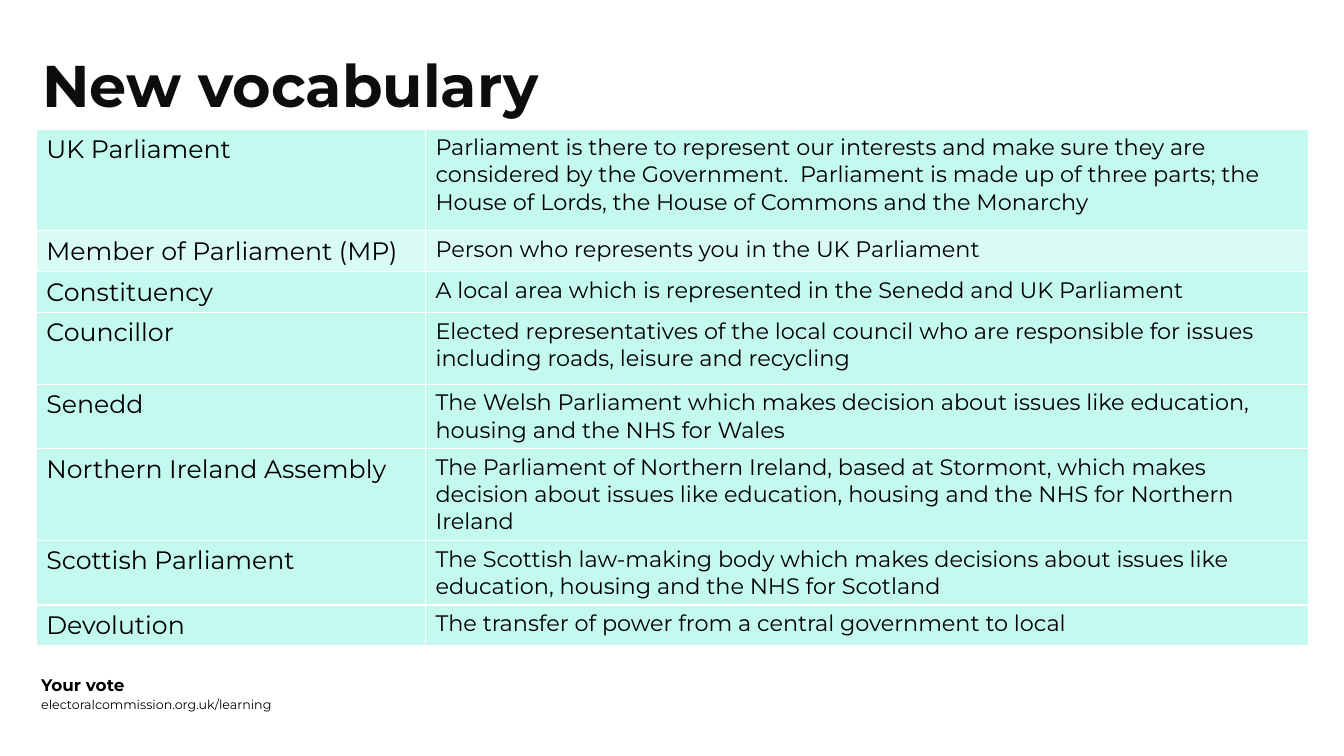
from lxml import etree
from pptx import Presentation
from pptx.dml.color import RGBColor
from pptx.enum.text import MSO_ANCHOR, PP_ALIGN
from pptx.oxml.ns import qn
from pptx.util import Inches, Pt

TOP, MIDDLE, LEFT = MSO_ANCHOR.TOP, MSO_ANCHOR.MIDDLE, PP_ALIGN.LEFT

FONT = "Montserrat"
COLOURS = {"title": "0D0D0D", "text": "000000", "cell": "00E7BD", "border": "FFFFFF"}
TITLE = "New vocabulary"
STRONG_TINT, LIGHT_TINT = 23, 15  # per cent opacity

# term, meaning, row height in inches, tint
VOCABULARY = [
    ("UK Parliament",
     "Parliament is there to represent our interests and make sure they are "
     "considered by the Government.  Parliament is made up of three parts; the "
     "House of Lords, the House of Commons and the Monarchy", 1.01, STRONG_TINT),
    ("Member of Parliament (MP)",
     "Person who represents you in the UK Parliament", 0.4, LIGHT_TINT),
    ("Constituency",
     "A local area which is represented in the Senedd and UK Parliament", 0.4, STRONG_TINT),
    ("Councillor",
     "Elected representatives of the local council who are responsible for issues "
     "including roads, leisure and recycling", 0.71, STRONG_TINT),
    ("Senedd",
     "The Welsh Parliament which makes decision about issues like education, "
     "housing and the NHS for Wales", 0.64, STRONG_TINT),
    ("Northern Ireland Assembly",
     "The Parliament of Northern Ireland, based at Stormont, which makes decision "
     "about issues like education, housing and the NHS for Northern Ireland",
     0.91, STRONG_TINT),
    ("Scottish Parliament",
     "The Scottish law-making body which makes decisions about issues like "
     "education, housing and the NHS for Scotland", 0.64, STRONG_TINT),
    ("Devolution",
     "The transfer of power from a central government to local", 0.4, STRONG_TINT),
]
COLUMNS = [(3.86, 18), (8.76, 16)]  # width in inches, text size
TABLE_LEFT, TABLE_TOP = 0.36, 1.28

# text, top in inches, size, bold
FOOTER = [
    ("Your vote", 6.59, 12, True),
    ("electoralcommission.org.uk/learning", 6.79, 9, False),
]


def style(paragraph, size, colour, bold=False):
    paragraph.alignment = LEFT
    font = paragraph.font
    font.name, font.size, font.bold = FONT, Pt(size), bold
    font.color.rgb = RGBColor.from_string(COLOURS[colour])


def paint_cell(cell, opacity):
    """Give the cell a translucent fill and thin borders on all sides."""
    properties = cell._tc.get_or_add_tcPr()
    for side in ("a:lnL", "a:lnR", "a:lnT", "a:lnB"):
        line = etree.SubElement(properties, qn(side), w=str(Pt(1)))
        solid = etree.SubElement(line, qn("a:solidFill"))
        etree.SubElement(solid, qn("a:srgbClr"), val=COLOURS["border"])
    cell.fill.solid()
    cell.fill.fore_color.rgb = RGBColor.from_string(COLOURS["cell"])
    colour = properties.find(qn("a:solidFill")).find(qn("a:srgbClr"))
    etree.SubElement(colour, qn("a:alpha"), val=str(opacity * 1000))


def add_title(slide):
    title = slide.shapes.title
    title.left, title.top = Inches(0.32), Inches(0.51)
    title.width, title.height = Inches(9.95), Inches(0.75)
    title.text_frame.text = TITLE
    title.text_frame.vertical_anchor = TOP
    paragraph = title.text_frame.paragraphs[0]
    style(paragraph, 42, "title", bold=True)
    paragraph.line_spacing = 0.9


def add_vocabulary(slide):
    width = sum(column[0] for column in COLUMNS)
    height = sum(entry[2] for entry in VOCABULARY)
    table = slide.shapes.add_table(
        len(VOCABULARY), len(COLUMNS), Inches(TABLE_LEFT), Inches(TABLE_TOP),
        Inches(width), Inches(height)).table
    table.first_row = table.horz_banding = False
    for column, (column_width, _) in zip(table.columns, COLUMNS):
        column.width = Inches(column_width)
    for row, (term, meaning, row_height, tint) in zip(table.rows, VOCABULARY):
        row.height = Inches(row_height)
        for cell, text, (_, size) in zip(row.cells, (term, meaning), COLUMNS):
            cell.text = text
            style(cell.text_frame.paragraphs[0], size, "text")
            paint_cell(cell, tint)


def add_footer(slide):
    for text, top, size, bold in FOOTER:
        box = slide.shapes.add_textbox(Inches(0.31), Inches(top), Inches(7.65), Inches(0.4))
        frame = box.text_frame
        frame.word_wrap = True
        frame.vertical_anchor = MIDDLE
        frame.text = text
        style(frame.paragraphs[0], size, "text", bold)


def main():
    presentation = Presentation()
    presentation.slide_width, presentation.slide_height = Inches(13.33), Inches(7.5)
    slide = presentation.slides.add_slide(presentation.slide_layouts.get_by_name("Title Only"))
    add_title(slide)
    add_vocabulary(slide)
    add_footer(slide)
    presentation.save("out.pptx")


if __name__ == "__main__":
    main()
